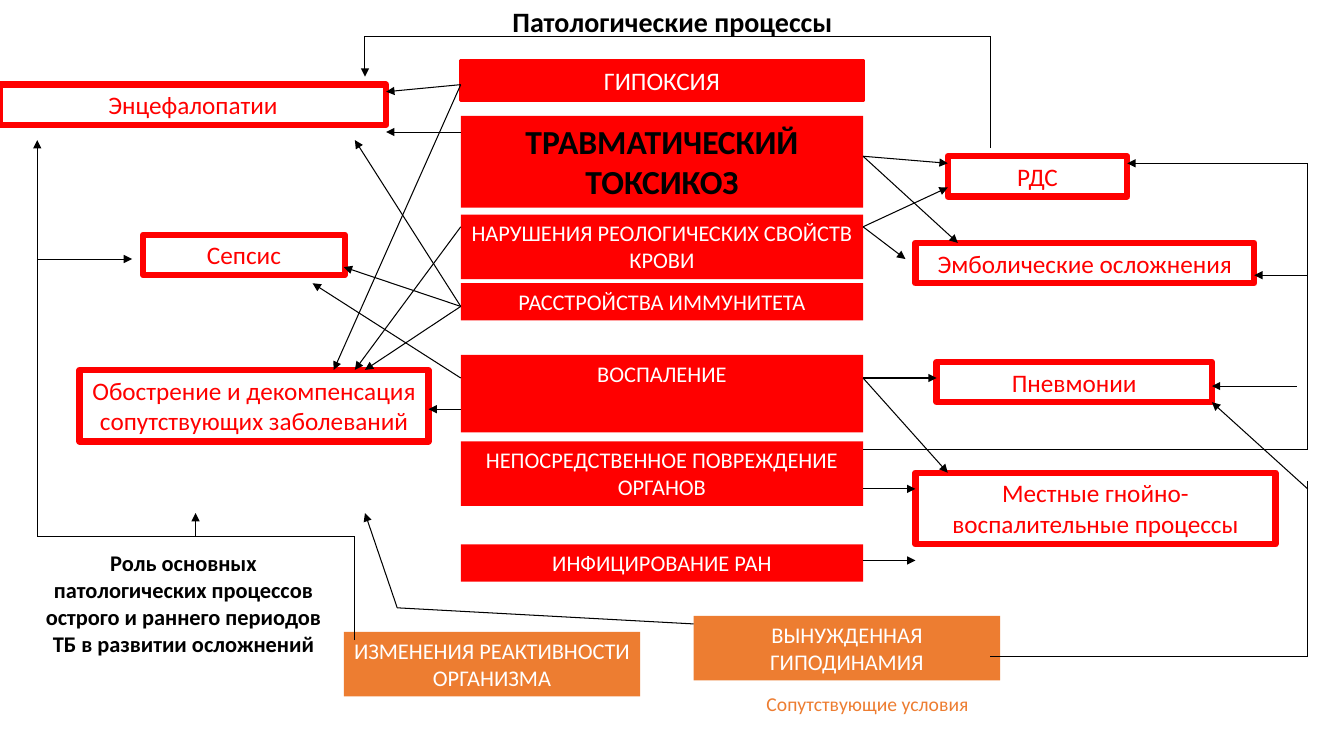
from itertools import pairwise

from pptx import Presentation
from pptx import util as u
from pptx.dml.color import RGBColor
from pptx.enum import shapes, text
from pptx.oxml.ns import qn
from lxml import etree

PX = 9144
INK = {"red": "FF0000", "orange": "ED7D31", "white": "FFFFFF", "black": "000000"}


def px(*nums):
    """Turn px lengths into EMU."""
    return [u.Emu(n * PX) for n in nums]


def tint(name):
    """Give the colour of a palette name."""
    return RGBColor.from_string(INK[name])


def write(shape, words, ink, size, bold=False):
    """Put one centred paragraph into a shape."""
    frame = shape.text_frame
    frame.word_wrap = True
    frame.vertical_anchor = text.MSO_ANCHOR.TOP
    para = frame.paragraphs[0]
    para.alignment = text.PP_ALIGN.CENTER
    run = para.add_run()
    run.text = words
    look = {"name": "Calibri", "size": u.Pt(size), "bold": bold}
    for key, val in look.items():
        setattr(run.font, key, val)
    run.font.color.rgb = tint(ink)


def label(tree, box, words, ink, size, bold=False):
    """Add a plain caption."""
    write(tree.add_textbox(*px(*box)), words, ink, size, bold)


def block(tree, box, words, fill, ink, size, bold=False, edge=0):
    """Add a filled box, with a red edge if one is asked for."""
    shape = tree.add_shape(shapes.MSO_SHAPE.RECTANGLE, *px(*box))
    shape.shadow.inherit = False
    shape.fill.solid()
    shape.fill.fore_color.rgb = tint(fill)
    if edge:
        shape.line.color.rgb = tint("red")
        shape.line.width = u.Pt(edge)
    else:
        shape.line.fill.background()
    write(shape, words, ink, size, bold)


def causes(tree, box):
    """Stack the red column of processes."""
    left, top, wide, _ = box
    rows = [
        (0, 40, "ГИПОКСИЯ", "white", 18, False, 2.25),
        (55, 91, "ТРАВМАТИЧЕСКИЙ ТОКСИКОЗ", "black", 24, True, 0),
        (153, 64, "НАРУШЕНИЯ РЕОЛОГИЧЕСКИХ СВОЙСТВ КРОВИ", "white", 16, False, 0),
        (221, 37, "РАССТРОЙСТВА ИММУНИТЕТА", "white", 16, False, 0),
        (292, 77, "ВОСПАЛЕНИЕ", "white", 16, False, 0),
        (378, 64, "НЕПОСРЕДСТВЕННОЕ ПОВРЕЖДЕНИЕ ОРГАНОВ", "white", 16, False, 0),
        (480, 37, "ИНФИЦИРОВАНИЕ РАН", "white", 16, False, 0),
    ]
    for y, high, words, *look in rows:
        block(tree, (left, top + y, wide, high), words, "red", *look)


def factors(tree, box):
    """Place the orange conditions and their caption."""
    left, top, *_ = box
    rows = [
        (347, 0, 304, "ВЫНУЖДЕННАЯ ГИПОДИНАМИЯ"),
        (0, 16, 294, "ИЗМЕНЕНИЯ РЕАКТИВНОСТИ ОРГАНИЗМА"),
    ]
    for x, y, wide, words in rows:
        block(tree, (left + x, top + y, wide, 64), words, "orange", "white", 16)
    label(tree, (left + 252, top + 71, 535, 33), "Сопутствующие условия", "orange", 14)


def effects(tree, box, rows):
    """Place framed complications inside a side region."""
    left, top, *_ = box
    for x, y, wide, high, words in rows:
        spot = (left + x, top + y, wide, high)
        block(tree, spot, words, "white", "red", 18, edge=4.5)


def links(tree, box, routes, arrow=True):
    """Draw routes of straight lines, with an arrowhead on the last leg."""
    left, top, *_ = box
    for route in routes:
        spots = [(left + x, top + y) for x, y in route]
        for start, end in pairwise(spots):
            line = tree.add_connector(shapes.MSO_CONNECTOR.STRAIGHT, *px(*start, *end))
            line.line.color.rgb = tint("black")
            line.line.width = u.Pt(0.75)
            if arrow and end == spots[-1]:
                tail = etree.SubElement(line.line._get_or_add_ln(), qn("a:tailEnd"))
                tail.set("type", "triangle")
            etree.SubElement(line._element.spPr, qn("a:effectLst"))


WEST = (0, 0, 457, 750)
EAST = (856, 0, 477, 750)

WEST_BOXES = [
    (0, 84, 383, 40, "Энцефалопатии"),
    (142, 233, 200, 40, "Сепсис"),
    (79, 367, 346, 71, "Обострение и декомпенсация сопутствующих заболеваний"),
]
EAST_BOXES = [
    (84, 155, 178, 40, "РДС"),
    (52, 241, 336, 40, "Эмболические осложнения"),
    (73, 359, 273, 40, "Пневмонии"),
    (52, 469, 357, 71, "Местные гнойно-воспалительные процессы"),
]
WEST_LINKS = [
    [(352, 635), (352, 532), (37, 532), (37, 139)],
    [(194, 532), (194, 509)],
    [(37, 257), (131, 257)],
    [(688, 619), (394, 603), (362, 509)],
    [(457, 406), (425, 406)],
    [(457, 375), (310, 281)],
    [(457, 304), (362, 367)],
    [(457, 304), (341, 265)],
    [(457, 304), (352, 139)],
    [(457, 84), (383, 91)],
    [(457, 84), (331, 367)],
    [(457, 131), (383, 131)],
    [(457, 225), (352, 367)],
    [(982, 147), (982, 36), (362, 36), (362, 76)],
]
EAST_LINKS = [
    [(0, 155), (84, 162)],
    [(0, 225), (84, 186)],
    [(0, 155), (94, 241)],
    [(0, 225), (42, 257)],
    [(0, 375), (73, 375)],
    [(0, 375), (84, 469)],
    [(0, 485), (52, 485)],
    [(0, 446), (441, 446), (441, 162), (262, 162)],
    [(441, 273), (388, 273)],
    [(430, 383), (346, 383)],
    [(0, 556), (52, 556)],
    [(441, 485), (346, 399)],
]
EAST_PLAIN = [[(126, 651), (441, 651), (441, 477)]]
ROLE = (
    "Роль основных патологических процессов острого и раннего "
    "периодов ТБ в развитии осложнений"
)


def main():
    """Build and save the slide."""
    deck = Presentation()
    deck.slide_width, deck.slide_height = px(1333, 750)
    tree = deck.slides.add_slide(deck.slide_layouts[6]).shapes
    label(tree, (142, 0, 1050, 44), "Патологические процессы", "black", 20, True)
    causes(tree, (457, 60, 399, 517))
    factors(tree, (341, 611, 787, 104))
    effects(tree, WEST, WEST_BOXES)
    effects(tree, EAST, EAST_BOXES)
    label(tree, (31, 540, 302, 118), ROLE, "black", 16, True)
    links(tree, WEST, WEST_LINKS)
    links(tree, EAST, EAST_LINKS)
    links(tree, EAST, EAST_PLAIN, arrow=False)
    deck.save("out.pptx")


if __name__ == "__main__":
    main()
